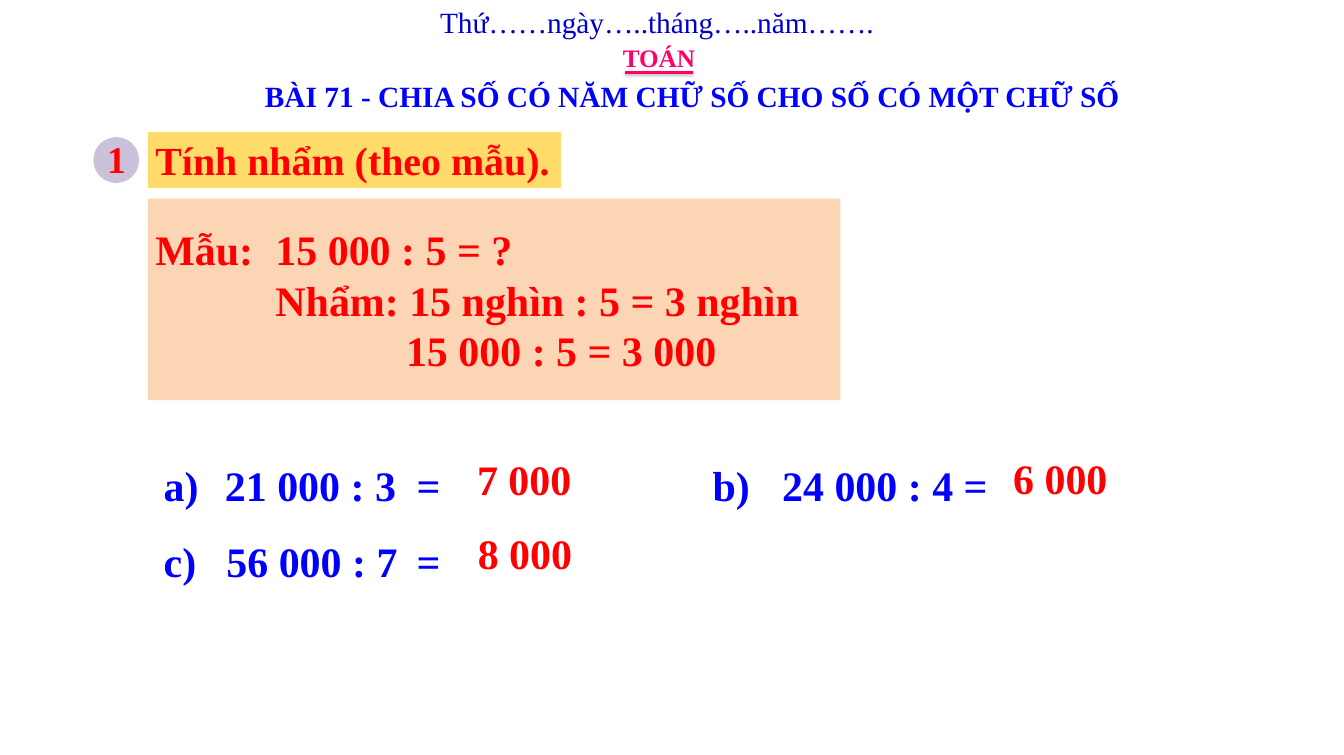
from lxml.etree import SubElement
from pptx import Presentation
from pptx.dml.color import RGBColor
from pptx.enum.shapes import MSO_CONNECTOR, MSO_SHAPE
from pptx.enum.text import MSO_ANCHOR, PP_ALIGN
from pptx.oxml import parse_xml
from pptx.oxml.ns import nsdecls, qn
from pptx.util import Inches, Pt

RED, BLUE, PINK, LILAC = "FF0000", "0000FF", "FF0066", "CCC1DA"

presentation = Presentation()
presentation.slide_width, presentation.slide_height = Inches(17.8), Inches(10)
column = presentation.slide_width / 178
row = presentation.slide_height / 100
slide = presentation.slides.add_slide(presentation.slide_layouts[5])
shapes = slide.shapes


def grid(left, top, width, height):
    return [round(left * column), round(top * row), round(width * column), round(height * row)]


def write(shape, *lines, size=40, color=RED, bold=True, align=PP_ALIGN.LEFT,
          anchor=MSO_ANCHOR.TOP, wrap=True, spacing=None, tabs=(), hanging=0, bullets=()):
    """Fill a shape with lines; tabs and hanging are counted in grid columns."""
    frame = shape.text_frame
    frame.word_wrap, frame.vertical_anchor = wrap, anchor
    for index, line in enumerate(lines):
        paragraph = frame.paragraphs[0] if index == 0 else frame.add_paragraph()
        paragraph.alignment, paragraph.line_spacing = align, spacing
        properties = paragraph._p.get_or_add_pPr()
        if index in bullets:
            properties.set("marL", str(round(hanging * column)))
            properties.set("indent", str(round(-hanging * column)))
            SubElement(properties, qn("a:buAutoNum"), type="alphaLcParenR")
        if tabs:
            tab_list = SubElement(properties, qn("a:tabLst"))
            for stop in tabs:
                SubElement(tab_list, qn("a:tab"), pos=str(round(stop * column)), algn="l")
        run = paragraph.add_run()
        run.text = line
        run.font.name, run.font.size, run.font.bold = "Times New Roman", Pt(size), bold
        run.font.color.rgb = RGBColor.from_string(color)


# Heading
write(shapes.add_textbox(*grid(57.3, 0, 60.1, 5.7)), "Thứ……ngày…..tháng…..năm…….",
      size=28, color="0000CC", bold=False, wrap=False)
write(shapes.add_textbox(*grid(81.5, 5.1, 11.7, 5)), "TOÁN", size=24, color=PINK, wrap=False)

left, top, width, height = grid(82.8, 9.6, 9, 0)
underline = shapes.add_connector(MSO_CONNECTOR.STRAIGHT, left, top, left + width, top)
underline.line.color.rgb = RGBColor.from_string(PINK)
underline.line.width = Pt(2)
underline._element.spPr.append(parse_xml(
    f'<a:effectLst {nsdecls("a")}><a:outerShdw blurRad="40000" dist="20000" dir="5400000" '
    'rotWithShape="0"><a:srgbClr val="000000"><a:alpha val="38000"/></a:srgbClr>'
    '</a:outerShdw></a:effectLst>'))

title = shapes.title
title.left, title.top, title.width, title.height = grid(32.9, 9.6, 117.5, 6.3)
frame = title.text_frame
frame.margin_left = frame.margin_right = Inches(0.16)
frame.margin_top = frame.margin_bottom = Inches(0.08)
write(title, "BÀI 71 - CHIA SỐ CÓ NĂM CHỮ SỐ CHO SỐ CÓ MỘT CHỮ SỐ",
      size=28, color=BLUE, align=PP_ALIGN.CENTER)

# Panels of the task
panels = []
for kind, area, fill in (
    (MSO_SHAPE.OVAL, (12.5, 18.3, 5.8, 5.8), LILAC),
    (MSO_SHAPE.RECTANGLE, (19.6, 17.5, 54.7, 7.4), "FFDB69"),
    (MSO_SHAPE.RECTANGLE, (19.6, 26.3, 91.7, 26.7), "FCD5B5"),
):
    panel = shapes.add_shape(kind, *grid(*area))
    panel.shadow.inherit = False
    panel.fill.solid()
    panel.fill.fore_color.rgb = RGBColor.from_string(fill)
    panel.line.fill.background()
    panels.append(panel)
badge, task, example = panels
badge.line.color.rgb = RGBColor.from_string(LILAC)
badge.line.width = Pt(2)

write(shapes.add_textbox(*grid(13.2, 17.5, 4.5, 7.1)), "1", size=36, wrap=False)
write(task, "Tính nhẩm (theo mẫu).", size=38, wrap=False)
write(example, "Mẫu:\t15 000 : 5 = ?", "\tNhẩm: 15 nghìn : 5 = 3 nghìn", "\t\t15 000 : 5 = 3 000",
      anchor=MSO_ANCHOR.MIDDLE, tabs=(15.9, 33.2))

# Exercises and answers
write(shapes.add_textbox(*grid(20.7, 57.1, 141.8, 20)),
      "21 000 : 3\t=\tb)\t24 000 : 4 =", "c)\t56 000 : 7\t=",
      color=BLUE, spacing=1.5, tabs=(8.3, 33.5, 72.7, 81.9), hanging=8.1, bullets=(0,))
for answer, left, top in (("6 000", 133.2, 59.4), ("7 000", 62.2, 59.6), ("8 000", 62.3, 69.4)):
    write(shapes.add_textbox(*grid(left, top, 22.5, 7.7)), answer)

presentation.save("out.pptx")
